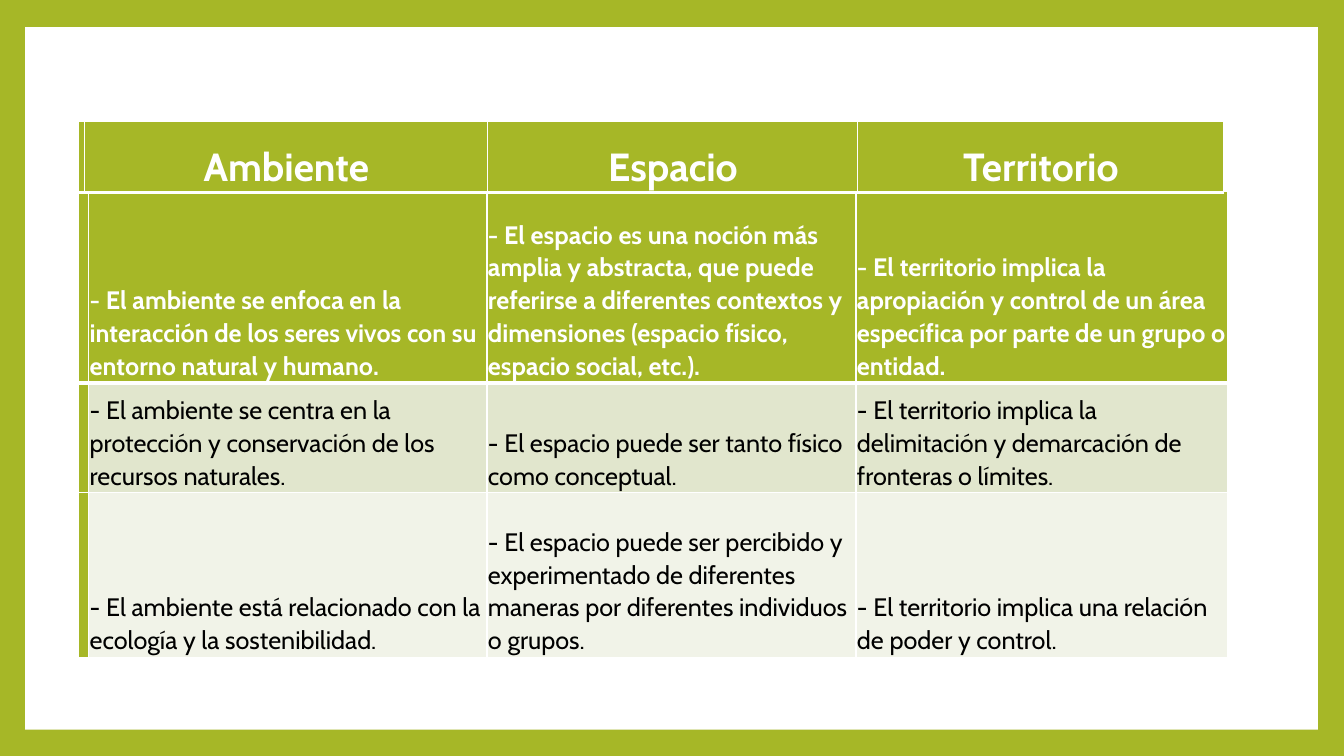
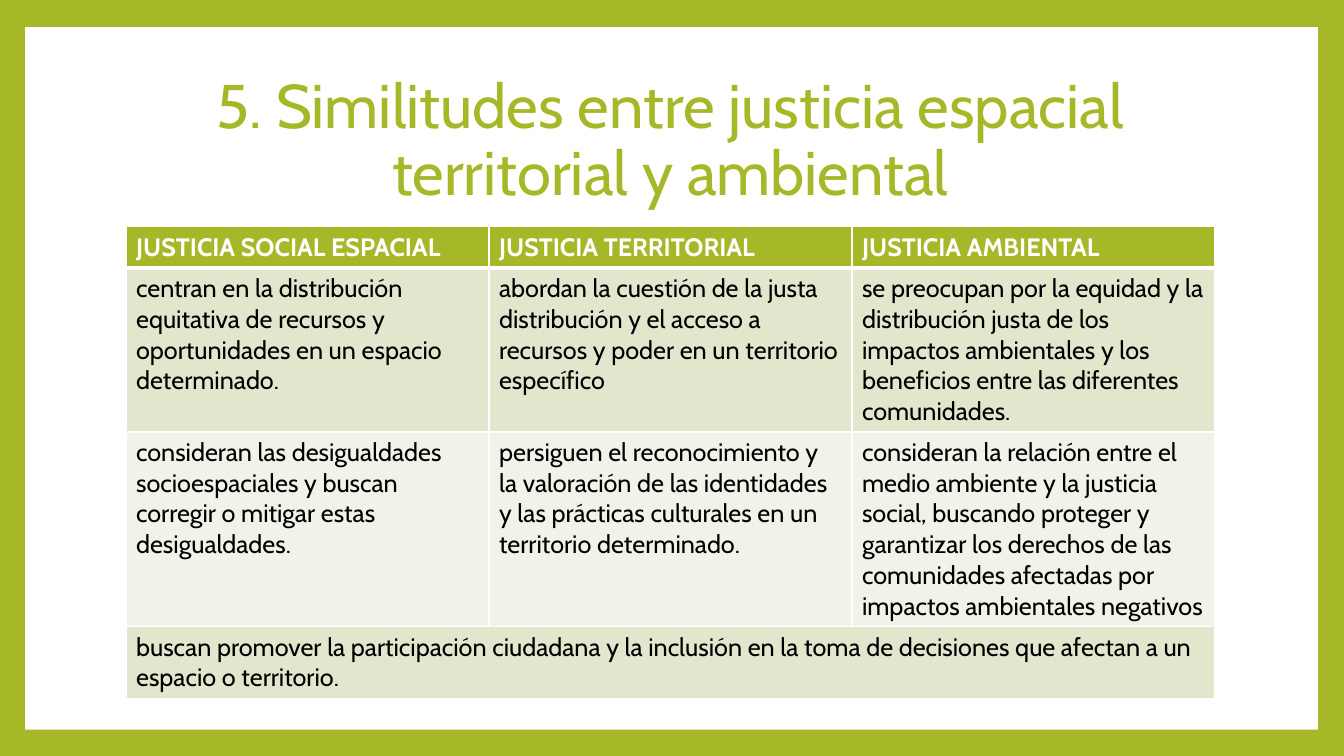
"""Builds two slides comparing ambiente, espacio and territorio, and their forms of justice."""
from lxml import etree
from pptx import Presentation
from pptx import util as u
from pptx.dml.color import RGBColor
from pptx.enum import shapes, text
from pptx.oxml.ns import qn

COLORS = {"green": "A6B727", "white": "FFFFFF", "black": "000000",
          "band_dark": "E1E6CD", "band_light": "F1F3E8"}
FONT = "Cabin"
WIDTH, HEIGHT = 13.33, 7.5
PANEL = (0.25, 0.27, 12.82, 6.97)
TITLE_BOX = (1.25, 0.67, 10.8, 1.48)

CONCEPTS = [["", "Ambiente", "Espacio", "Territorio"]]
DIFFERENCES = [
    ["",
     "- El ambiente se enfoca en la interacción de los seres vivos con su entorno natural y humano.",
     "- El espacio es una noción más amplia y abstracta, que puede referirse a diferentes contextos "
     "y dimensiones (espacio físico, espacio social, etc.).",
     "- El territorio implica la apropiación y control de un área específica por parte de un grupo "
     "o entidad."],
    ["",
     "- El ambiente se centra en la protección y conservación de los recursos naturales.",
     "- El espacio puede ser tanto físico como conceptual.",
     "- El territorio implica la delimitación y demarcación de fronteras o límites."],
    ["",
     "- El ambiente está relacionado con la ecología y la sostenibilidad.",
     "- El espacio puede ser percibido y experimentado de diferentes maneras por diferentes "
     "individuos o grupos.",
     "- El territorio implica una relación de poder y control."],
]
TITLE = "5. Similitudes entre justicia espacial territorial y ambiental"
SIMILARITIES = [
    ["JUSTICIA SOCIAL ESPACIAL", "JUSTICIA TERRITORIAL", "JUSTICIA AMBIENTAL"],
    ["centran en la distribución equitativa de recursos y oportunidades en un espacio determinado.",
     "abordan la cuestión de la justa distribución y el acceso a recursos y poder en un territorio "
     "específico",
     "se preocupan por la equidad y la distribución justa de los impactos ambientales y los "
     "beneficios entre las diferentes comunidades."],
    ["consideran las desigualdades socioespaciales y buscan corregir o mitigar estas desigualdades.",
     "persiguen el reconocimiento y la valoración de las identidades y las prácticas culturales en "
     "un territorio determinado.",
     "consideran la relación entre el medio ambiente y la justicia social, buscando proteger y "
     "garantizar los derechos de las comunidades afectadas por impactos ambientales negativos"],
    ["buscan promover la participación ciudadana y la inclusión en la toma de decisiones que "
     "afectan a un espacio o territorio."],
]


def rgb(name):
    return RGBColor.from_string(COLORS[name])


def inches(values):
    return [u.Inches(v) for v in values]


def add_run(p, words, size, color, bold=False):
    r = p.add_run()
    r.text = words
    r.font.name, r.font.size, r.font.bold = FONT, u.Pt(size), bold
    r.font.color.rgb = rgb(color)


def set_borders(cell, row):
    tc_pr = cell._tc.get_or_add_tcPr()
    widths = {"L": 1, "R": 1, "T": 3 if row == 1 else 1, "B": 3 if row == 0 else 1}
    for side, width in widths.items():
        ln = etree.SubElement(tc_pr, qn(f"a:ln{side}"), w=str(u.Pt(width)))
        fill = etree.SubElement(ln, qn("a:solidFill"))
        etree.SubElement(fill, qn("a:srgbClr"), val=COLORS["white"])


def fill_cell(cell, words, row, size, align, spaced):
    header = row == 0
    band = "green" if header or not words else ("band_light", "band_dark")[row % 2]
    set_borders(cell, row)
    cell.fill.solid()
    cell.fill.fore_color.rgb = rgb(band)
    p = cell.text_frame.paragraphs[0]
    p.alignment = align
    if spaced:
        cell.margin_left = cell.margin_right = u.Inches(0.01)
        cell.margin_top = cell.margin_bottom = u.Inches(0.01)
        cell.vertical_anchor = text.MSO_ANCHOR.BOTTOM
    if words:
        if spaced:
            p.line_spacing = 1.07
            p.space_before = p.space_after = u.Pt(24)
        add_run(p, words, size, "white" if header else "black", header)


def add_grid(slide, rows, left, top, widths, heights, size=18,
             align=text.PP_ALIGN.LEFT, spaced=False):
    box = inches((left, top, sum(widths), sum(heights)))
    table = slide.shapes.add_table(len(heights), len(widths), *box).table
    table.horz_banding = False
    for column, width in zip(table.columns, inches(widths)):
        column.width = width
    for row, height in zip(table.rows, inches(heights)):
        row.height = height
    for i, row in enumerate(rows):
        if len(row) < len(widths):
            table.cell(i, len(row) - 1).merge(table.cell(i, len(widths) - 1))
        for j, words in enumerate(row):
            fill_cell(table.cell(i, j), words, i, size, align, spaced)


def style_master(prs, slide):
    master = prs.slide_master
    master.background.fill.solid()
    master.background.fill.fore_color.rgb = rgb("green")
    sp = slide.shapes.add_shape(shapes.MSO_SHAPE.RECTANGLE, *inches(PANEL))
    sp.shadow.inherit = False
    sp.fill.solid()
    sp.fill.fore_color.rgb = rgb("white")
    sp.line.fill.background()
    master.shapes._spTree.insert(2, sp._element)


def add_title(slide, words):
    title = slide.shapes.title
    title.left, title.top, title.width, title.height = inches(TITLE_BOX)
    tf = title.text_frame
    tf.word_wrap = True
    tf.vertical_anchor = text.MSO_ANCHOR.MIDDLE
    p = tf.paragraphs[0]
    p.alignment, p.line_spacing = text.PP_ALIGN.CENTER, 0.9
    add_run(p, words, 44, "green")


def main():
    prs = Presentation()
    prs.slide_width, prs.slide_height = inches((WIDTH, HEIGHT))
    title_only, blank = prs.slide_layouts[5], prs.slide_layouts[6]

    slide = prs.slides.add_slide(blank)
    style_master(prs, slide)
    add_grid(slide, DIFFERENCES, 0.78, 1.9, (0.1, 3.95, 3.66, 3.69), (1.9, 1.09, 1.63),
             spaced=True)
    add_grid(slide, CONCEPTS, 0.78, 1.2, (0.05, 4, 3.67, 3.63), (0.71,), size=28,
             align=text.PP_ALIGN.CENTER, spaced=True)

    slide = prs.slides.add_slide(title_only)
    add_title(slide, TITLE)
    columns = len(SIMILARITIES[0])
    add_grid(slide, SIMILARITIES, TITLE_BOX[0], 2.25, [TITLE_BOX[2] / columns] * columns,
             (0.41, 1.6, 1.9, 0.7))
    prs.save("out.pptx")


if __name__ == "__main__":
    main()
